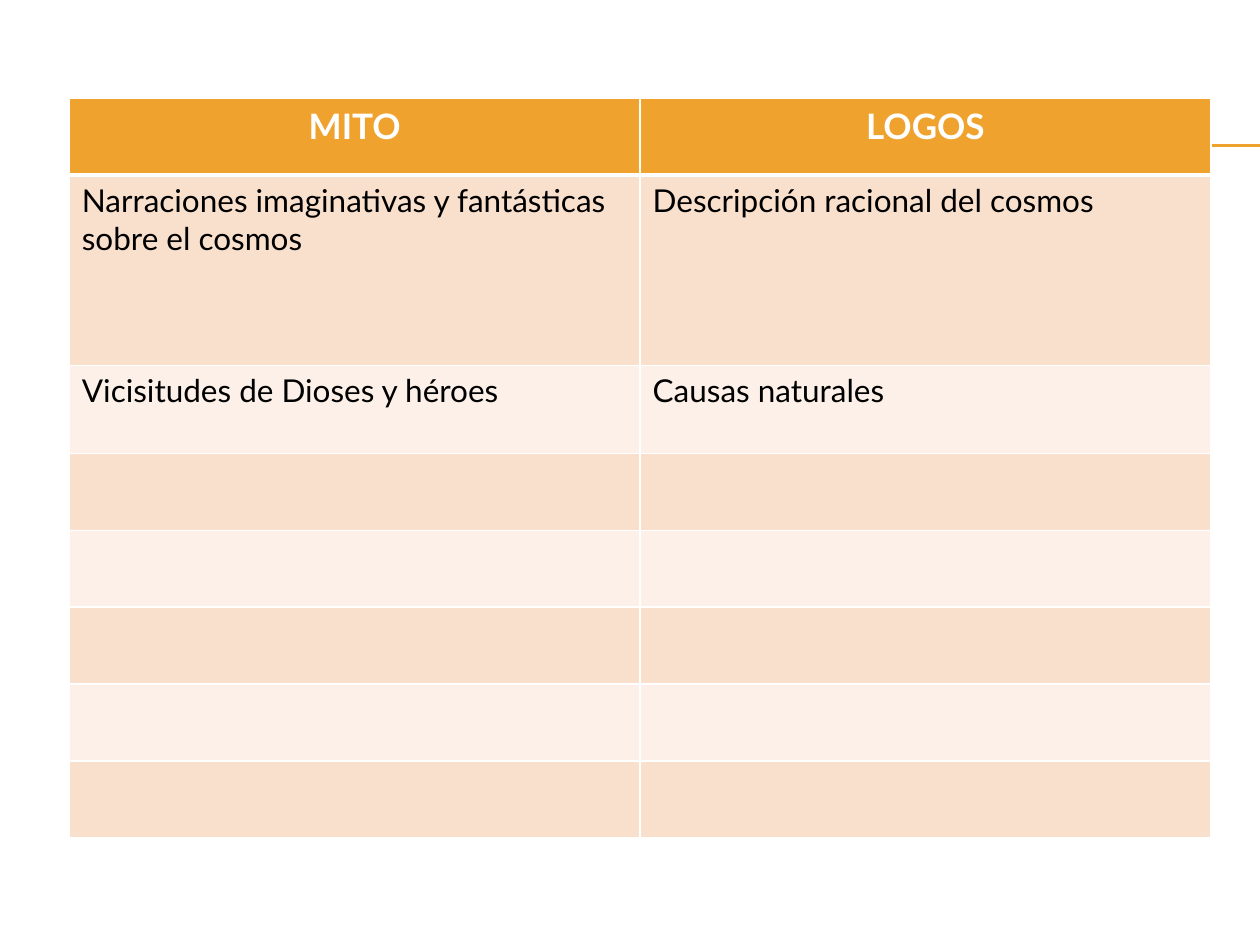
from lxml.etree import SubElement
from pptx import Presentation
from pptx.dml.color import RGBColor
from pptx.enum.shapes import MSO_CONNECTOR
from pptx.enum.text import PP_ALIGN
from pptx.oxml import parse_xml
from pptx.oxml.ns import nsdecls, qn
from pptx.util import Inches, Pt

COLORS = {"gold": "F0A22E", "peach": "F9E0CD", "cream": "FCF0E8",
          "white": "FFFFFF", "black": "000000"}
ROWS = [
    ("MITO", "LOGOS"),
    ("Narraciones imaginativas y fantásticas sobre el cosmos",
     "Descripción racional del cosmos"),
    ("Vicisitudes de Dioses y héroes", "Causas naturales"),
] + [("", "")] * 5
HEIGHTS = [0.61, 1.51, 0.7] + [0.61] * 5
WIDTH = 4.53


def color(name):
    return RGBColor.from_string(COLORS[name])


def add_rule(slide, top):
    rule = slide.shapes.add_connector(
        MSO_CONNECTOR.STRAIGHT, Inches(0.56), Inches(top), Inches(10), Inches(top))
    rule.line.color.rgb = color("gold")
    rule.line.width = Pt(0.75)
    SubElement(rule._element.spPr, qn("a:effectLst"))


def set_text(frame, text, size=18, tint="black", bold=False, align=PP_ALIGN.LEFT):
    par = frame.paragraphs[0]
    par.alignment = align
    par.font.size = Pt(size)
    if text:
        run = par.add_run()
        run.text = text
        run.font.name = "Lato"
        run.font.size = Pt(size)
        run.font.bold = bold
        run.font.color.rgb = color(tint)


def set_edges(cell, top=1, bottom=1):
    """Draw white cell borders, with widths in points."""
    props = cell._tc.get_or_add_tcPr()
    widths = {"L": 1, "R": 1, "T": top, "B": bottom}
    for i, (side, width) in enumerate(widths.items()):
        props.insert(i, parse_xml(
            f'<a:ln{side} {nsdecls("a")} w="{Pt(width)}"><a:solidFill>'
            f'<a:srgbClr val="{COLORS["white"]}"/></a:solidFill></a:ln{side}>'))


def fill_cell(cell, text, row):
    cell.fill.solid()
    if row == 0:
        cell.fill.fore_color.rgb = color("gold")
        set_text(cell.text_frame, text, size=20, tint="white", bold=True,
                 align=PP_ALIGN.CENTER)
        set_edges(cell, bottom=3)
    else:
        cell.fill.fore_color.rgb = color("peach" if row % 2 else "cream")
        set_text(cell.text_frame, text)
        set_edges(cell, top=3 if row == 1 else 1)


def add_grid(slide):
    table = slide.shapes.add_table(
        len(ROWS), 2, Inches(0.55), Inches(0.78),
        Inches(2 * WIDTH), Inches(sum(HEIGHTS))).table
    for col in table.columns:
        col.width = Inches(WIDTH)
    for r, (texts, height) in enumerate(zip(ROWS, HEIGHTS)):
        table.rows[r].height = Inches(height)
        for c, text in enumerate(texts):
            fill_cell(table.cell(r, c), text, r)


def main():
    deck = Presentation()
    deck.slide_width, deck.slide_height = Inches(10), Inches(7.5)
    slide = deck.slides.add_slide(deck.slide_layouts[6])
    for top in (1.15, 1.16):
        add_rule(slide, top)
    add_grid(slide)
    deck.save("out.pptx")


if __name__ == "__main__":
    main()
